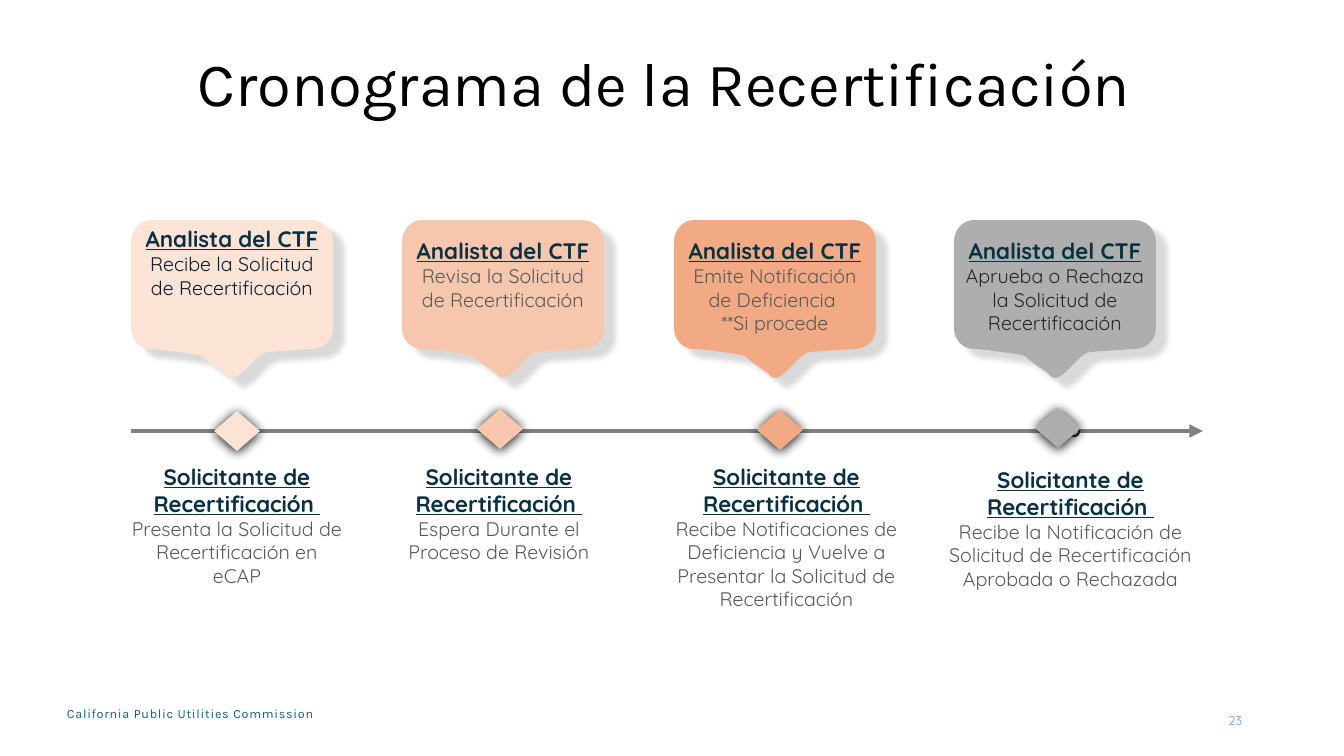
from lxml.etree import SubElement
from pptx import Presentation
from pptx.dml.color import RGBColor
from pptx.enum.shapes import MSO_CONNECTOR, MSO_SHAPE
from pptx.enum.text import MSO_ANCHOR, PP_ALIGN
from pptx.oxml.ns import qn
from pptx.util import Pt

EMU_PER_PX = 914400 / 100.8
COLORS = {
    "title": "000000", "footer": "156082", "number": "6996C9",
    "heading": "0A3041", "body": "595959", "receive_text": "0A1E31",
    "decide_text": "262626", "receive": "FBE3D6", "review": "F6C6AD",
    "notify": "F2AA84", "decide": "AEAEAE", "axis": "808080",
    "dot": "FFFFFF", "dot_line": "092A39", "shadow": "000000",
}
CALLOUT_HEIGHT = 158
CALLOUT_START = (0, 22)
CALLOUT_SEGMENTS = [
    [(0, 10), (9, 0), (20, 0)], [(180, 0)],
    [(193, 0), (202, 10), (202, 22)], [(202, 108)],
    [(202, 120), (193, 129), (180, 129)], [(136, 132)],
    [(123, 133), (105, 171), (94, 153)],
    [(85, 147), (77, 142), (71, 136)],
    [(60, 133), (44, 132), (34, 130)],
    [(29, 130), (24, 129), (20, 129)],
    [(9, 129), (0, 120), (0, 108)],
]
DOT_LEFTS = (221, 492, 1070)
STAGES = [
    dict(color="receive", text="receive_text", callout=(131, 220), inset=5,
         analyst=[" Recibe la Solicitud de Recertificación"],
         diamond=(214, 411), applicant=(120, 458, 234, 122),
         action="Presenta la Solicitud de Recertificación en eCAP"),
    dict(color="review", text="body", callout=(402, 220), inset=17,
         analyst=[" Revisa la Solicitud de Recertificación"],
         diamond=(477, 409), applicant=(382, 458, 234, 95),
         action="Espera Durante el Proceso de Revisión"),
    dict(color="notify", text="body", callout=(674, 220), inset=17,
         analyst=[" Emite Notificación de Deficiencia ", "**Si procede"],
         diamond=(757, 410), applicant=(641, 458, 291, 122),
         action="Recibe Notificaciones de Deficiencia y Vuelve a Presentar "
                "la Solicitud de Recertificación"),
    dict(color="decide", text="decide_text", callout=(954, 220), inset=17,
         analyst=[" Aprueba o Rechaza la Solicitud de Recertificación"],
         diamond=(1035, 408), applicant=(925, 461, 291, 122),
         action="Recibe la Notificación de Solicitud de Recertificación "
                "Aprobada o Rechazada"),
]


def px(length):
    return round(length * EMU_PER_PX)


def rgb(name):
    return RGBColor.from_string(COLORS[name])


def style(run, size, color, font="Quicksand"):
    run.font.size, run.font.name = Pt(size), font
    run.font.color.rgb = rgb(color)
    return run.font


def write(paragraph, text, size, color, font="Quicksand", align=PP_ALIGN.CENTER):
    paragraph.text = text
    paragraph.alignment = align
    return style(paragraph.runs[0], size, color, font)


def write_heading(paragraph, text):
    heading = write(paragraph, text, 16, "heading")
    heading.bold = heading.underline = True


def add_text_box(slide, box):
    frame = slide.shapes.add_textbox(*map(px, box)).text_frame
    frame.word_wrap = True
    return frame


def paint(shape, color):
    shape.fill.solid()
    shape.fill.fore_color.rgb = rgb(color)
    shape.line.fill.background()
    shape.shadow.inherit = False


def cast_shadow(shape, opacity, blur, distance, angle):
    effects = shape._element.spPr.find(qn("a:effectLst"))
    shadow = SubElement(effects, qn("a:outerShdw"), blurRad=str(Pt(blur)),
                        dist=str(Pt(distance)), dir=str(angle * 60000),
                        algn="ctr", rotWithShape="0")
    tint = SubElement(shadow, qn("a:srgbClr"), val=COLORS["shadow"])
    SubElement(tint, qn("a:alpha"), val=str(opacity * 1000))


def draw_callout_outline(slide, left, top):
    builder = slide.shapes.build_freeform(*CALLOUT_START, scale=EMU_PER_PX)
    builder.add_line_segments([segment[-1] for segment in CALLOUT_SEGMENTS], close=True)
    callout = builder.convert_to_shape(px(left), px(top))
    outline = next(callout._element.iter(qn("a:path")))
    for line, segment in zip(outline.findall(qn("a:lnTo")), CALLOUT_SEGMENTS):
        if len(segment) == 3:
            curve = outline.makeelement(qn("a:cubicBezTo"))
            for x, y in segment:
                SubElement(curve, qn("a:pt"), x=str(x), y=str(y))
            outline.replace(line, curve)
    outline.set("h", str(CALLOUT_HEIGHT))
    callout.height = px(CALLOUT_HEIGHT)
    return callout


def add_callout(slide, stage):
    callout = draw_callout_outline(slide, *stage["callout"])
    paint(callout, stage["color"])
    cast_shadow(callout, 14, 4, 10, 40)
    frame = callout.text_frame
    frame.word_wrap = True
    frame.vertical_anchor = MSO_ANCHOR.TOP
    frame.margin_top = px(stage["inset"])
    analyst = frame.paragraphs[0]
    write_heading(analyst, "Analista del CTF")
    task, *remarks = stage["analyst"]
    task_run = analyst.add_run()
    task_run.text = task
    style(task_run, 14, stage["text"])
    for remark in remarks:
        write(frame.add_paragraph(), remark, 14, stage["text"])


def add_applicant(slide, stage):
    frame = add_text_box(slide, stage["applicant"])
    write_heading(frame.paragraphs[0], "Solicitante de Recertificación ")
    write(frame.add_paragraph(), stage["action"], 14, "body")


def add_diamond(slide, stage):
    left, top = stage["diamond"]
    diamond = slide.shapes.add_shape(MSO_SHAPE.DIAMOND, px(left), px(top), px(46), px(40))
    paint(diamond, stage["color"])
    cast_shadow(diamond, 100, 8.5, 1, 90)


def add_axis(slide, left, top, width):
    axis = slide.shapes.add_connector(
        MSO_CONNECTOR.STRAIGHT, px(left), px(top), px(left + width), px(top))
    axis.line.color.rgb = rgb("axis")
    axis.line.width = Pt(3.25)
    SubElement(axis.line._get_or_add_ln(), qn("a:tailEnd"), type="triangle")
    SubElement(axis._element.spPr, qn("a:effectLst"))
    for dot_left in DOT_LEFTS:
        dot = slide.shapes.add_shape(
            MSO_SHAPE.OVAL, px(dot_left), px(top - 4), px(9), px(9))
        paint(dot, "dot")
        dot.line.color.rgb = rgb("dot_line")
        dot.line.width = Pt(1.5)


def add_title(slide, box):
    frame = add_text_box(slide, box)
    frame.vertical_anchor = MSO_ANCHOR.MIDDLE
    title = frame.paragraphs[0]
    write(title, "Cronograma de la Recertificación ", 44, "title", "Karla")
    title.line_spacing = 0.9


def add_footer(slide, commission_box, number_box):
    commission = add_text_box(slide, commission_box)
    commission.margin_left = commission.margin_right = 0
    commission.margin_top = commission.margin_bottom = 0
    font = write(commission.paragraphs[0], "California Public Utilities Commission",
                 9, "footer", "Karla", PP_ALIGN.LEFT)
    font._element.set("spc", "50")
    number = add_text_box(slide, number_box)
    number.vertical_anchor = MSO_ANCHOR.MIDDLE
    write(number.paragraphs[0], "23", 9, "number", align=PP_ALIGN.RIGHT)


def add_timeline(slide, left, axis_top, width):
    for add_part in (add_callout, None, add_applicant, add_diamond):
        if add_part is None:
            add_axis(slide, left, axis_top, width)
            continue
        for stage in STAGES:
            add_part(slide, stage)


def main():
    deck = Presentation()
    deck.slide_width, deck.slide_height = px(1344), px(756)
    slide = deck.slides.add_slide(deck.slide_layouts[6])
    add_title(slide, (67, 40, 1210, 93))
    add_timeline(slide, 131, 431, 1072)
    add_footer(slide, (67, 706, 324, 15), (950, 701, 302, 40))
    deck.save("out.pptx")


if __name__ == "__main__":
    main()
